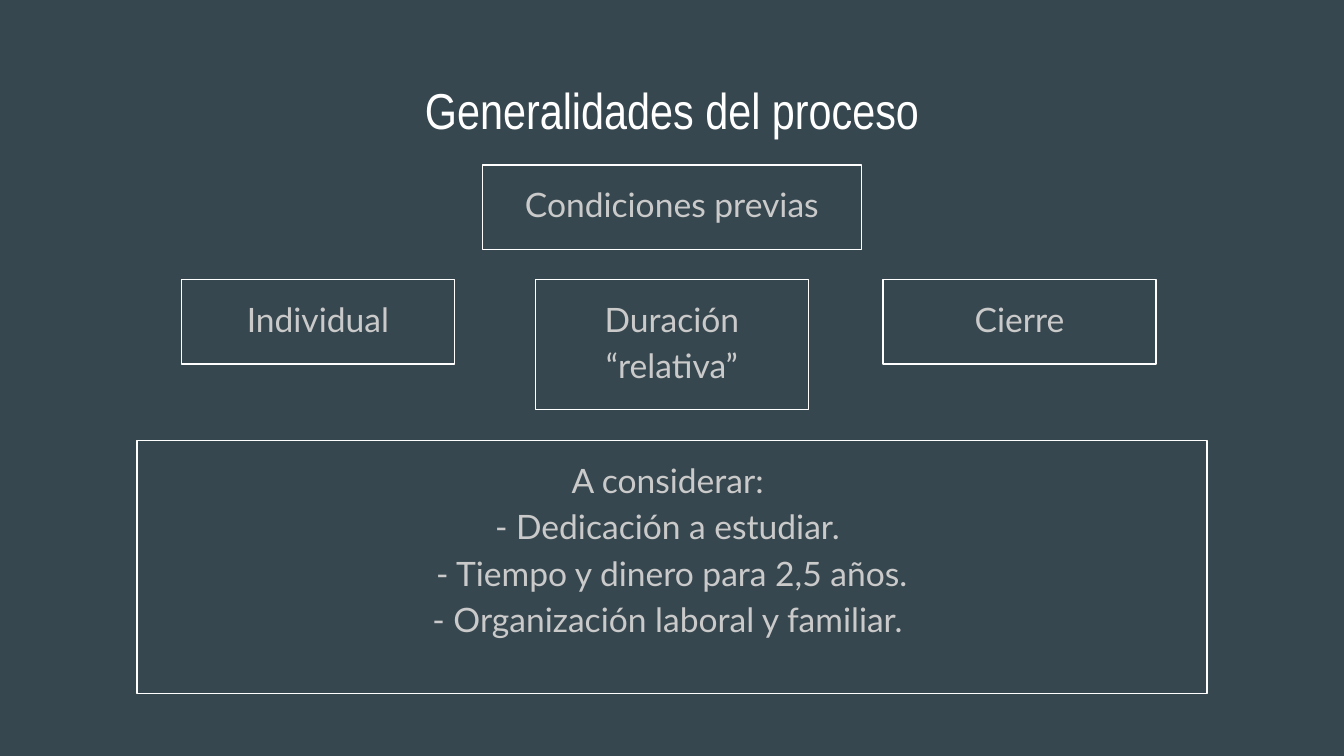
import pptx
import pptx.util
import pptx.dml.color
import pptx.enum.shapes
import pptx.enum.text

Cm = pptx.util.Cm
Pt = pptx.util.Pt

COLORS = {"bg": "37474F", "title": "FFFFFF", "line": "FFFFFF", "body": "CACACA"}
SLIDE_W, SLIDE_H = 25.4, 14.29


def rgb(name):
    return pptx.dml.color.RGBColor.from_string(COLORS[name])


def put_text(tf, text, font="Lato", size=18, color="body", spacing=1.15, after=12):
    tf.word_wrap = True
    tf.vertical_anchor = pptx.enum.text.MSO_ANCHOR.TOP
    tf.margin_left = tf.margin_right = tf.margin_top = tf.margin_bottom = Cm(0.25)
    p = tf.paragraphs[0]
    p.alignment = pptx.enum.text.PP_ALIGN.CENTER
    p.line_spacing = spacing
    p.space_after = Pt(after)
    for i, line in enumerate(text.split("\n")):
        if i:
            p.add_line_break()
        r = p.add_run()
        r.text = line
        r.font.name = font
        r.font.size = Pt(size)
        r.font.color.rgb = rgb(color)


class Deck:
    def __init__(self):
        self.prs = pptx.Presentation()
        self.prs.slide_width = Cm(SLIDE_W)
        self.prs.slide_height = Cm(SLIDE_H)
        self.s = self.prs.slides.add_slide(self.prs.slide_layouts[6])
        fill = self.s.background.fill
        fill.solid()
        fill.fore_color.rgb = rgb("bg")

    def title(self, text, y, w, h):
        sp = self.s.shapes.add_textbox(Cm((SLIDE_W - w) / 2), Cm(y), Cm(w), Cm(h))
        put_text(sp.text_frame, text, font="Arial Narrow", size=27,
                 color="title", spacing=1.0, after=0)

    def box(self, text, y, w, h, x=None):
        left = (SLIDE_W - w) / 2 if x is None else x
        sp = self.s.shapes.add_shape(pptx.enum.shapes.MSO_SHAPE.RECTANGLE,
                                     Cm(left), Cm(y), Cm(w), Cm(h))
        sp.shadow.inherit = False
        sp.fill.background()
        sp.line.color.rgb = rgb("line")
        sp.line.width = Pt(0.75)
        put_text(sp.text_frame, text)


def main():
    deck = Deck()
    deck.title("Generalidades del proceso", 1.24, 23.67, 1.6)
    deck.box("Condiciones previas", 3.12, 7.16, 1.6)
    for text, x, h in [("Individual", 3.43, 1.6),
                       ("Duración\n“relativa”", None, 2.46),
                       ("Cierre", 16.69, 1.6)]:
        deck.box(text, 5.28, 5.16, h, x)
    deck.box("A considerar: \n- Dedicación a estudiar. \n"
             "- Tiempo y dinero para 2,5 años.\n"
             "- Organización laboral y familiar. ", 8.33, 20.22, 4.78)
    deck.prs.save("out.pptx")


if __name__ == "__main__":
    main()
